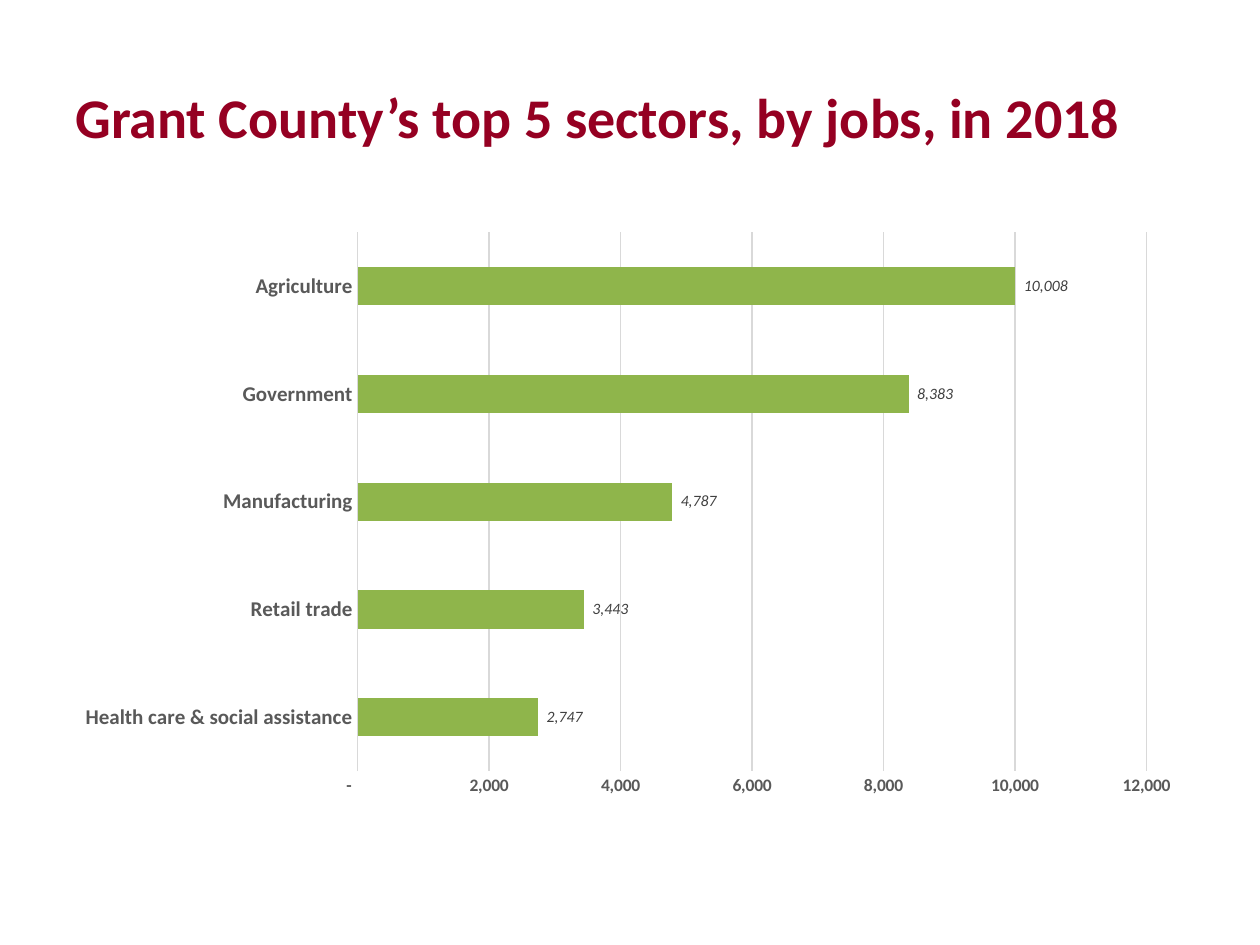
from pptx import Presentation
from pptx.chart.data import CategoryChartData
from pptx.dml.color import RGBColor
from pptx.enum import chart as ch, text
from pptx.util import Inches, Pt

TITLE = "Grant County’s top 5 sectors, by jobs, in 2018"
JOBS_BY_SECTOR = [  # largest first
    ("Agriculture", 10008),
    ("Government", 8383),
    ("Manufacturing", 4787),
    ("Retail trade", 3443),
    ("Health care & social assistance", 2747),
]
JOBS_FORMAT = '_(* #,##0_);_(* \\(#,##0\\);_(* "-"??_);_('

FONT = "Calibri"
MAROON = RGBColor(0x95, 0x00, 0x22)
GREEN = RGBColor(0x8F, 0xB5, 0x4B)
AXIS_GREY = RGBColor(0x59, 0x59, 0x59)
LABEL_GREY = RGBColor(0x40, 0x40, 0x40)
GRID_GREY = RGBColor(0xD9, 0xD9, 0xD9)

WIDTH, HEIGHT = Inches(10), Inches(7.5)
MARGIN = int(WIDTH * 0.05)
CONTENT_WIDTH = WIDTH - 2 * MARGIN


def set_font(font, size, color, bold=False, italic=False):
    font.name, font.size = FONT, Pt(size)
    font.bold, font.italic = bold, italic
    font.color.rgb = color


def set_line(line):
    line.color.rgb = GRID_GREY
    line.width = Pt(0.75)


def add_title(slide):
    frame = slide.shapes.add_textbox(
        MARGIN, int(HEIGHT * 0.04), CONTENT_WIDTH, Inches(1.25)).text_frame
    frame.word_wrap = True
    frame.vertical_anchor = text.MSO_ANCHOR.MIDDLE
    heading = frame.paragraphs[0]
    heading.text = TITLE
    set_font(heading.font, 32, MAROON, bold=True)


def add_jobs_chart(slide):
    # A bar chart stacks its categories upwards, so the smallest goes first.
    sectors, jobs = zip(*reversed(JOBS_BY_SECTOR))
    data = CategoryChartData(number_format=JOBS_FORMAT)
    data.categories = sectors
    data.add_series("Jobs", jobs)
    chart = slide.shapes.add_chart(
        ch.XL_CHART_TYPE.BAR_CLUSTERED, MARGIN, Inches(1.75),
        CONTENT_WIDTH, Inches(4.66), data).chart
    chart.has_legend = chart.has_title = False
    chart.font.name, chart.font.size = FONT, Pt(10)

    sector_axis, jobs_axis = chart.category_axis, chart.value_axis
    for axis, size in ((sector_axis, 12), (jobs_axis, 10)):
        axis.major_tick_mark = axis.minor_tick_mark = ch.XL_TICK_MARK.NONE
        set_font(axis.tick_labels.font, size, AXIS_GREY, bold=True)
    set_line(sector_axis.format.line)
    jobs_axis.format.line.fill.background()
    set_line(jobs_axis.major_gridlines.format.line)
    jobs_axis.minimum_scale, jobs_axis.maximum_scale = 0, 12000
    jobs_axis.major_unit = 2000

    plot = chart.plots[0]
    plot.gap_width = 182
    plot.vary_by_categories = False
    bars = plot.series[0]
    bars.format.fill.solid()
    bars.format.fill.fore_color.rgb = GREEN

    labels = bars.data_labels
    labels.show_value = True
    labels.position = ch.XL_LABEL_POSITION.OUTSIDE_END
    set_font(labels.font, 9, LABEL_GREY, italic=True)
    for numbers in (jobs_axis.tick_labels, labels):
        numbers.number_format = JOBS_FORMAT
        numbers.number_format_is_linked = False


def main():
    deck = Presentation()
    deck.slide_width, deck.slide_height = WIDTH, HEIGHT
    slide = deck.slides.add_slide(deck.slide_layouts[6])
    add_title(slide)
    add_jobs_chart(slide)
    deck.save("out.pptx")


if __name__ == "__main__":
    main()
